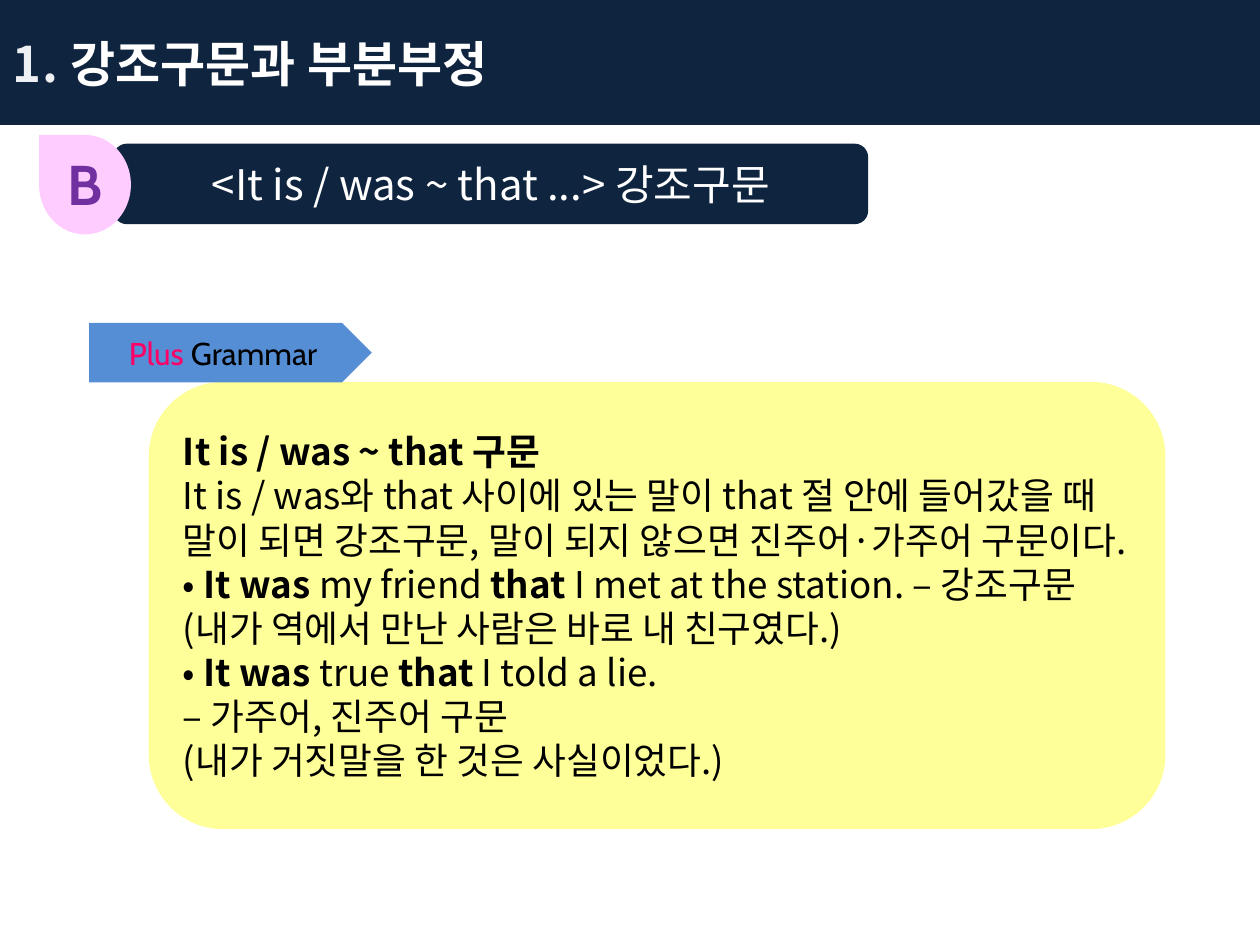
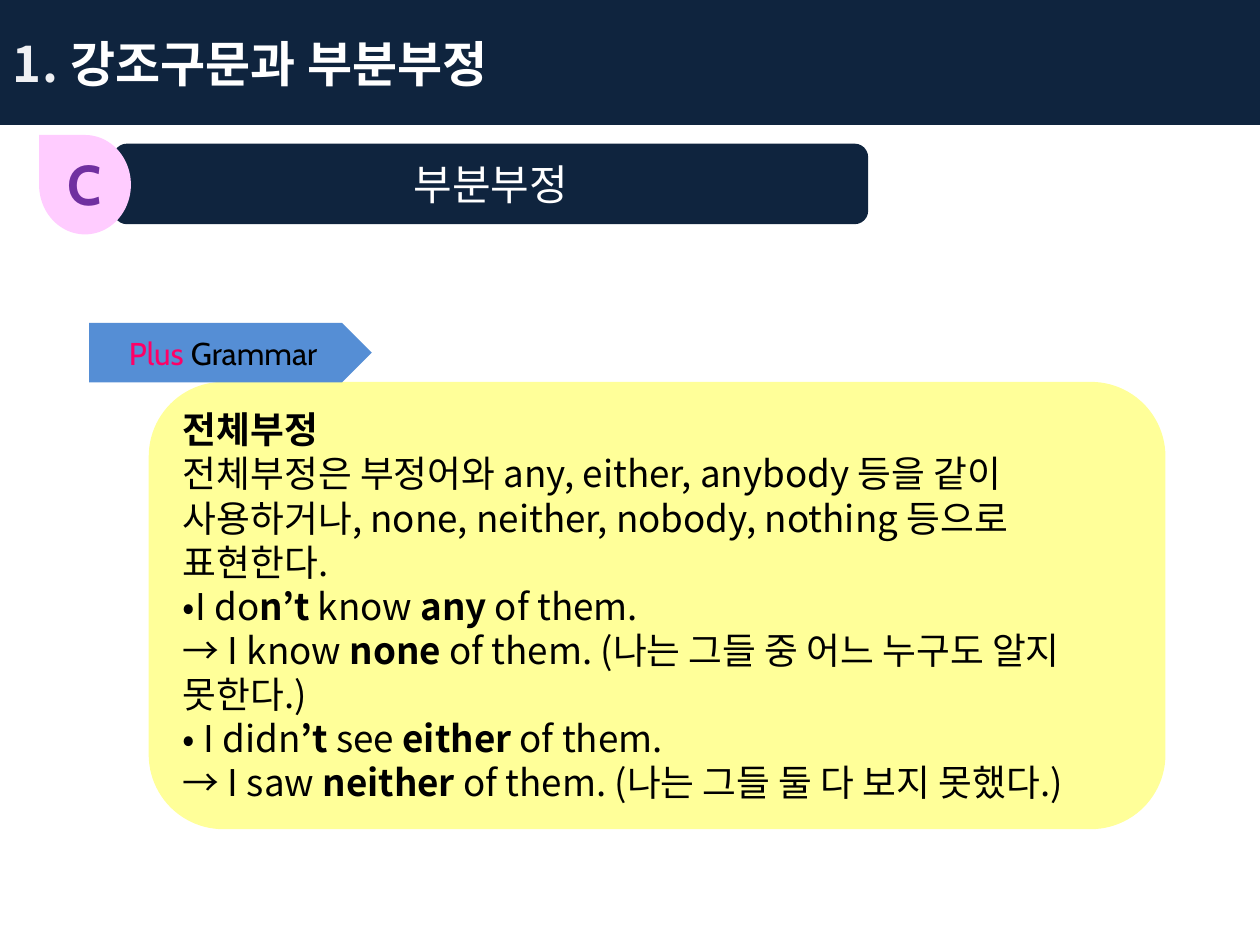
"""Build two grammar slides on emphatic sentences and partial negation."""
from lxml.etree import SubElement
from pptx import Presentation
from pptx.dml.color import RGBColor
from pptx.enum.shapes import MSO_SHAPE
from pptx.enum.text import MSO_ANCHOR, MSO_AUTO_SIZE, PP_ALIGN
from pptx.oxml.ns import qn
from pptx.util import Pt

NAVY = RGBColor(0x0F, 0x24, 0x3E)
WHITE = RGBColor(0xFF, 0xFF, 0xFF)
OFF_WHITE = RGBColor(0xFC, 0xFC, 0xFD)
PINK = RGBColor(0xFF, 0xCC, 0xFF)
PURPLE = RGBColor(0x70, 0x30, 0xA0)
YELLOW = RGBColor(0xFF, 0xFF, 0x99)
BLUE = RGBColor(0x55, 0x8E, 0xD5)
MAGENTA = RGBColor(0xFF, 0x00, 0x66)
BLACK = RGBColor(0x00, 0x00, 0x00)

KOREAN_FONT = "Noto Sans CJK KR"
LATIN_FONT = "Cabin"
TOPIC_FORMAT = {"name": KOREAN_FONT, "size": Pt(24)}
TITLE_FORMAT = {"name": KOREAN_FONT, "size": Pt(28), "bold": True}
LETTER_FORMAT = {"name": LATIN_FONT, "size": Pt(32), "bold": True}
NOTE_FORMAT = {"name": KOREAN_FONT, "size": Pt(21)}
LABEL_FORMAT = {"name": LATIN_FONT, "size": Pt(18)}

SECTIONS = [
    ("B", "<It is / was ~ that ...> 강조구문", [
        "**It is / was ~ that 구문**",
        "It is / was와 that 사이에 있는 말이 that 절 안에 들어갔을 때 말이 되면 강조구문, "
        "말이 되지 않으면 진주어·가주어 구문이다.",
        "• **It was** my friend **that** I met at the station. – 강조구문",
        "(내가 역에서 만난 사람은 바로 내 친구였다.)",
        "• **It was **true **that** I told a lie.",
        "– 가주어, 진주어 구문",
        "(내가 거짓말을 한 것은 사실이었다.)",
    ]),
    ("C", "부분부정", [
        "**전체부정**",
        "전체부정은 부정어와 any, either, anybody 등을 같이 사용하거나, "
        "none, neither, nobody, nothing 등으로 표현한다.",
        "•I do**n’t** know **any** of them.",
        "→ I know **none** of them. (나는 그들 중 어느 누구도 알지 못한다.)",
        "• I didn**’t** see **either** of them.",
        "→ I saw **neither** of them. (나는 그들 둘 다 보지 못했다.)",
    ]),
]


def add_filled_shape(slide, kind, left, top, width, height, color):
    shape = slide.shapes.add_shape(kind, Pt(left), Pt(top), Pt(width), Pt(height))
    shape.shadow.inherit = False
    shape.fill.solid()
    shape.fill.fore_color.rgb = color
    shape.line.fill.background()
    shape.text_frame.word_wrap = True
    shape.text_frame.vertical_anchor = MSO_ANCHOR.MIDDLE
    return shape


def add_run(paragraph, text, color, format_values):
    run = paragraph.add_run()
    run.text = text
    run.font.color.rgb = color
    for name, value in format_values.items():
        setattr(run.font, name, value)
    SubElement(run.font._element, qn("a:ea"), typeface=format_values["name"])
    return run


presentation = Presentation()
presentation.slide_width = Pt(720)
presentation.slide_height = Pt(540)

for letter, topic, notes in SECTIONS:
    slide = presentation.slides.add_slide(presentation.slide_layouts[6])

    topic_bar = add_filled_shape(
        slide, MSO_SHAPE.FLOWCHART_ALTERNATE_PROCESS, 64.8, 82.1, 431.3, 46, NAVY)
    paragraph = topic_bar.text_frame.paragraphs[0]
    paragraph.alignment = PP_ALIGN.CENTER
    add_run(paragraph, topic, WHITE, TOPIC_FORMAT)

    title_band = add_filled_shape(slide, MSO_SHAPE.RECTANGLE, 0, 0, 720, 71.4, NAVY)
    paragraph = title_band.text_frame.paragraphs[0]
    paragraph.alignment = PP_ALIGN.LEFT
    number = add_run(paragraph, "1. ", OFF_WHITE, TITLE_FORMAT)
    number.font._element.set("spc", "50")
    number_color = number.font._element.find(".//" + qn("a:srgbClr"))
    SubElement(number_color, qn("a:alpha"), val="95000")
    add_run(paragraph, "강조구문과 부분부정", WHITE, TITLE_FORMAT)

    badge = add_filled_shape(slide, MSO_SHAPE.TEAR, 20.2, 79.3, 56.8, 52.5, PINK)
    badge.rotation = 270
    letter_box = slide.shapes.add_textbox(Pt(31.7), Pt(82.1), Pt(33.8), Pt(46))
    letter_box.text_frame.word_wrap = True
    letter_box.text_frame.auto_size = MSO_AUTO_SIZE.SHAPE_TO_FIT_TEXT
    add_run(letter_box.text_frame.paragraphs[0], letter, PURPLE, LETTER_FORMAT)

    note_box = add_filled_shape(
        slide, MSO_SHAPE.FLOWCHART_ALTERNATE_PROCESS, 85, 218.2, 581, 255.6, YELLOW)
    for index, note in enumerate(notes):
        frame = note_box.text_frame
        paragraph = frame.add_paragraph() if index else frame.paragraphs[0]
        paragraph.alignment = PP_ALIGN.LEFT
        for position, text in enumerate(note.split("**")):
            if text:
                add_run(paragraph, text, BLACK, {**NOTE_FORMAT, "bold": position % 2 == 1})

    label = add_filled_shape(slide, MSO_SHAPE.PENTAGON, 51, 184.5, 161.5, 34, BLUE)
    paragraph = label.text_frame.paragraphs[0]
    paragraph.alignment = PP_ALIGN.CENTER
    add_run(paragraph, "Plus ", MAGENTA, LABEL_FORMAT)
    add_run(paragraph, "Grammar", BLACK, LABEL_FORMAT)

presentation.save("out.pptx")
